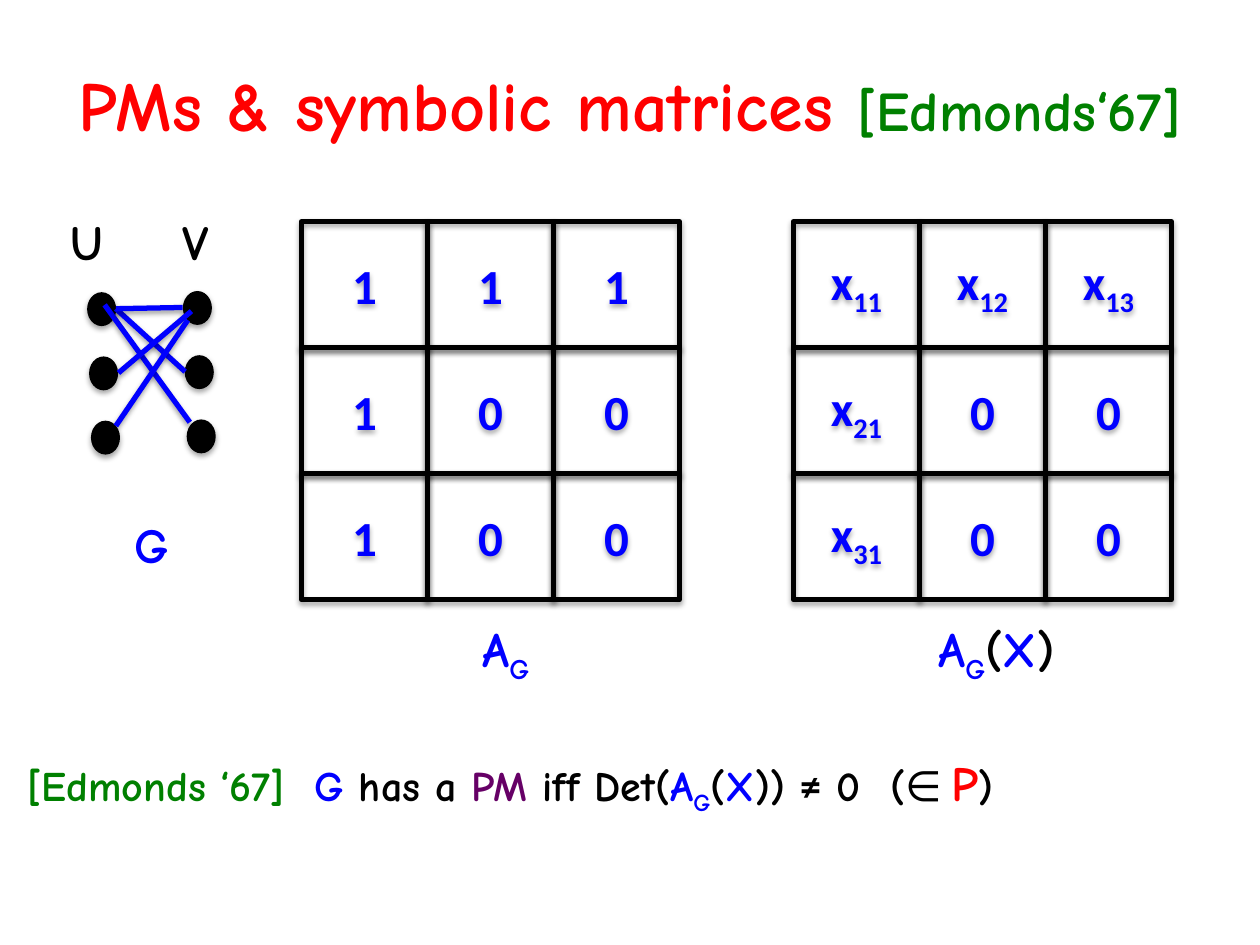
from dataclasses import dataclass

from lxml.etree import SubElement
from pptx import Presentation
from pptx.dml.color import RGBColor
from pptx.enum.shapes import MSO_CONNECTOR, MSO_SHAPE
from pptx.enum.text import MSO_ANCHOR, MSO_AUTO_SIZE, PP_ALIGN
from pptx.oxml.ns import qn
from pptx.util import Pt


@dataclass(frozen=True)
class Theme:
    hand: str = "Comic Neue"
    plain: str = "Calibri"
    black: str = "000000"
    blue: str = "0000FF"
    red: str = "FF0000"
    green: str = "008000"
    purple: str = "660066"
    title: int = 40
    citation: int = 32
    label: int = 28
    body: int = 24
    stroke: int = 3


THEME = Theme()


@dataclass(frozen=True)
class Span:
    text: str
    colour: str = THEME.blue
    size: int = THEME.label
    font: str = THEME.hand
    bold: bool = True
    subscript: bool = False


def body(text, colour=THEME.black, **options):
    return Span(text, colour, **{"size": THEME.body, **options})


TITLE = [
    Span("PMs & symbolic matrices ", THEME.red, THEME.title),
    Span("[Edmonds‘67]", THEME.green, THEME.citation),
]
THEOREM = [
    body("[Edmonds ‘67]  ", THEME.green),
    body("G", THEME.blue),
    body(" has a "),
    body("PM ", THEME.purple),
    body("iff Det("),
    body("A", THEME.blue),
    body("G", THEME.blue, subscript=True),
    body("("),
    body("X", THEME.blue),
    body(")) "),
    body("≠", font=THEME.plain),
    body(" 0  ("),
    body("∈ ", font=THEME.plain, bold=False),
    body("P", THEME.red, size=THEME.label),
    body(")"),
]
ADJACENCY = [Span("A"), Span("G", subscript=True)]
SYMBOLIC = ADJACENCY + [Span("(", THEME.black), Span("X"), Span(")", THEME.black)]

MATRICES = [
    (172.3, [["1", "1", "1"], ["1", "0", "0"], ["1", "0", "0"]],
     ADJACENCY, (268.6, 48.2)),
    (453.4, [["x11", "x12", "x13"], ["x21", "0", "0"], ["x31", "0", "0"]],
     SYMBOLIC, (529.2, 90)),
]
MATRIX_TOP, CELL = 126.7, 72
CAPTION_TOP, LABEL_HEIGHT = 349.9, 41

NODE_COLUMNS = [(49.8, 167), (104.5, 166.3)]
NODE_WIDTH, NODE_HEIGHT = 16.6, 19.4
NODE_SHIFT, NODE_STEP, NODE_COUNT = 1.1, 36.7, 3
EDGES = [
    ((59.8, 174.2), (108.5, 241.3)),
    ((66.2, 176.4), (105.8, 212.4)),
    ((66.2, 176.4), (104.4, 175.7)),
    ((67.7, 213.1), (109.4, 177.8)),
    ((66.2, 243.4), (107.3, 182.9)),
]
GRAPH_LABELS = [
    (Span("G"), 69.8, 290.2, 34.6),
    (Span("U", THEME.black), 33.1, 117.4, 35.3),
    (Span("V", THEME.black), 97.2, 117.4, 33.8),
]


def colour_of(code):
    return RGBColor.from_string(code)


def write(para, spans):
    for span in spans:
        run = para.add_run()
        run.text = span.text
        run.font.size = Pt(span.size)
        run.font.name = span.font
        run.font.bold = span.bold
        run.font.color.rgb = colour_of(span.colour)
        if span.subscript:
            run.font._element.set("baseline", "-25000")


def cast_shadow(shape, distance, opacity):
    effects = SubElement(shape._element.spPr, qn("a:effectLst"))
    shadow = SubElement(effects, qn("a:outerShdw"), blurRad=str(Pt(3.1)),
                        dist=str(Pt(distance)), dir="5400000", rotWithShape="0")
    colour = SubElement(shadow, qn("a:srgbClr"), val=THEME.black)
    SubElement(colour, qn("a:alpha"), val=str(opacity * 1000))


def add_label(shapes, spans, left, top, width):
    box = shapes.add_textbox(Pt(left), Pt(top), Pt(width), Pt(LABEL_HEIGHT))
    box.text_frame.word_wrap = False
    box.text_frame.auto_size = MSO_AUTO_SIZE.SHAPE_TO_FIT_TEXT
    write(box.text_frame.paragraphs[0], spans)


def add_cell(shapes, entry, left, top):
    cell = shapes.add_shape(MSO_SHAPE.RECTANGLE, Pt(left), Pt(top), Pt(CELL), Pt(CELL))
    cell.fill.background()
    cell.line.color.rgb = colour_of(THEME.black)
    cell.line.width = Pt(THEME.stroke)
    cast_shadow(cell, 1.8, 35)
    cell.text_frame.vertical_anchor = MSO_ANCHOR.MIDDLE
    para = cell.text_frame.paragraphs[0]
    para.alignment = PP_ALIGN.CENTER
    spans = [Span(entry[0], font=THEME.plain)]
    if entry[1:]:
        spans.append(Span(entry[1:], font=THEME.plain, subscript=True))
    write(para, spans)


def add_matrix(page, left, rows, caption, caption_place):
    shapes = page.shapes.add_group_shape().shapes
    for row, entries in reversed(list(enumerate(rows))):
        for column, entry in enumerate(entries):
            add_cell(shapes, entry, left + column * CELL, MATRIX_TOP + row * CELL)
    caption_left, caption_width = caption_place
    add_label(shapes, caption, caption_left, CAPTION_TOP, caption_width)


def add_graph(page):
    shapes = page.shapes.add_group_shape().shapes
    for left, top in NODE_COLUMNS:
        for index in range(NODE_COUNT):
            node = shapes.add_shape(
                MSO_SHAPE.OVAL, Pt(left + index * NODE_SHIFT),
                Pt(top + index * NODE_STEP), Pt(NODE_WIDTH), Pt(NODE_HEIGHT))
            node.fill.solid()
            node.fill.fore_color.rgb = colour_of(THEME.black)
            node.line.fill.background()
            cast_shadow(node, 1.8, 35)
    for start, end in EDGES:
        edge = shapes.add_connector(
            MSO_CONNECTOR.STRAIGHT, *(Pt(value) for value in start + end))
        edge.line.color.rgb = colour_of(THEME.blue)
        edge.line.width = Pt(THEME.stroke)
        cast_shadow(edge, 1.6, 38)
    for span, left, top, width in GRAPH_LABELS:
        add_label(shapes, [span], left, top, width)


def main():
    deck = Presentation()
    deck.slide_width, deck.slide_height = Pt(720), Pt(540)
    page = deck.slides.add_slide(deck.slide_layouts[5])

    title = page.shapes.title
    title.left, title.top, title.width, title.height = Pt(0), Pt(3.6), Pt(720), Pt(110.9)
    title.text_frame.vertical_anchor = MSO_ANCHOR.MIDDLE
    title.text_frame.paragraphs[0].alignment = PP_ALIGN.CENTER
    write(title.text_frame.paragraphs[0], TITLE)

    theorem = page.shapes.add_textbox(Pt(8.6), Pt(419), Pt(702.7), Pt(116.6))
    theorem.text_frame.word_wrap = True
    theorem.text_frame.paragraphs[0].line_spacing = 1.2
    write(theorem.text_frame.paragraphs[0], THEOREM)

    add_graph(page)
    for matrix in MATRICES:
        add_matrix(page, *matrix)
    deck.save("out.pptx")


if __name__ == "__main__":
    main()
